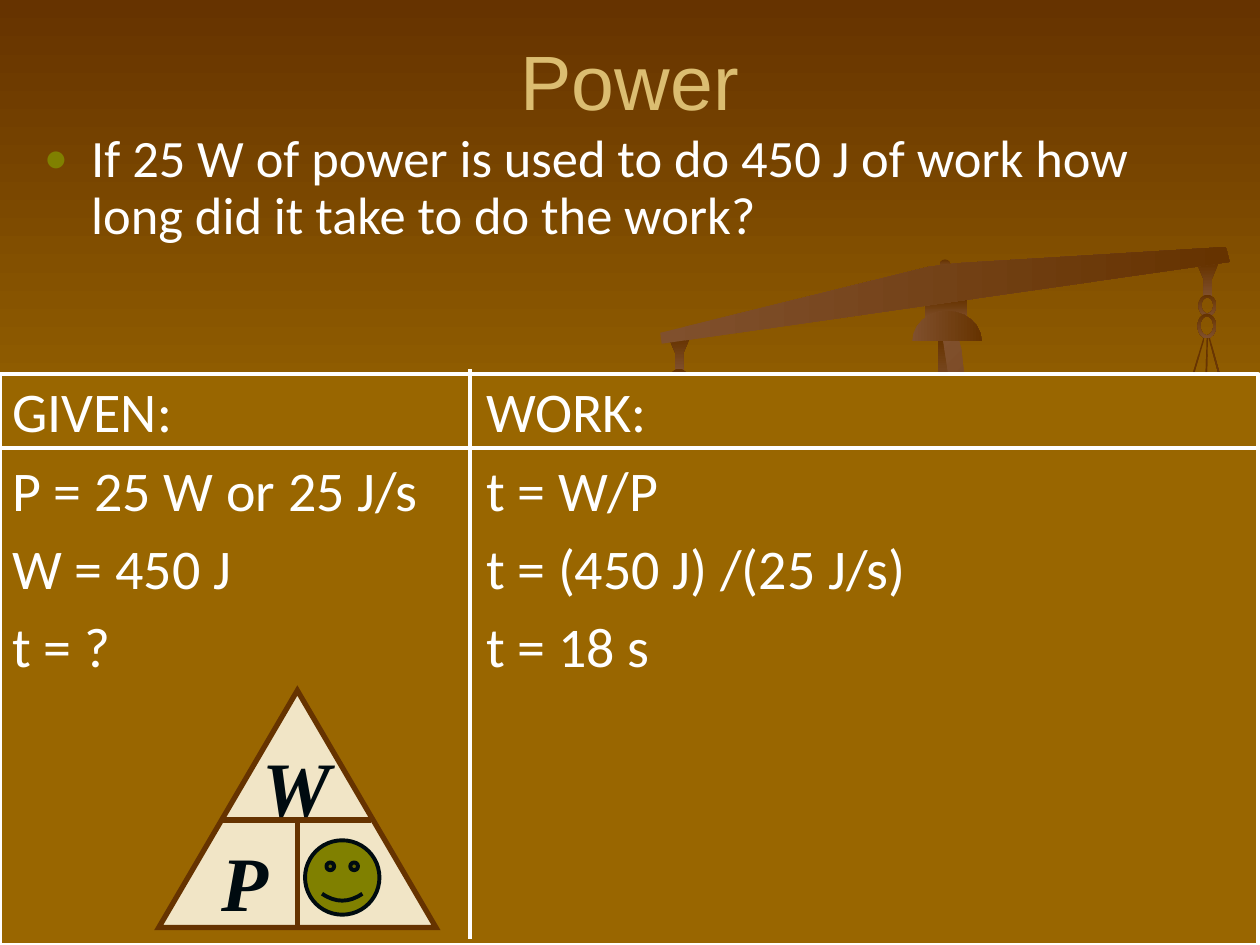
from copy import deepcopy
from dataclasses import dataclass
from math import cos, pi, sin

from lxml import etree
from pptx import Presentation
from pptx import util as u
from pptx.dml.color import RGBColor
from pptx.enum import shapes, text
from pptx.oxml import ns

Cm, Pt = u.Cm, u.Pt
RECTANGLE, OVAL = shapes.MSO_SHAPE.RECTANGLE, shapes.MSO_SHAPE.OVAL


@dataclass(frozen=True)
class Theme:
    brown: str = "663300"
    ochre: str = "996600"
    bronze: str = "80502D"
    gold: str = "DBBD71"
    cream: str = "F1E5C6"
    olive: str = "808000"
    ink: str = "000B10"
    white: str = "FFFFFF"
    title_size: int = 44
    question_size: int = 30
    answer_size: int = 32
    letter_size: int = 44
    panel_line: float = 2.25
    triangle_line: float = 3


theme = Theme()


def paint(shape, fill, line=None, width=0, angle=0):
    """Fill with one colour or a pair of gradient colours; outline if asked."""
    shape.shadow.inherit = False
    if isinstance(fill, tuple):
        shape.fill.gradient()
        shape.fill.gradient_angle = -angle % 360
        for stop, position, colour in zip(shape.fill.gradient_stops, (0, 1), fill):
            stop.position, stop.color.rgb = position, RGBColor.from_string(colour)
    else:
        shape.fill.solid()
        shape.fill.fore_color.rgb = RGBColor.from_string(fill)
    if line:
        shape.line.color.rgb = RGBColor.from_string(line)
        shape.line.width = Pt(width)
    else:
        shape.line.fill.background()


def write(parent, box, lines, colour, font, layout=None, frame=None):
    """Add a text box with one paragraph per line and return its paragraphs."""
    text_frame = parent.add_textbox(*map(Cm, box)).text_frame
    for name, value in {"word_wrap": True, **(frame or {})}.items():
        setattr(text_frame, name, value)
    for number, line in enumerate(lines):
        paragraph = text_frame.add_paragraph() if number else text_frame.paragraphs[0]
        for name, value in (layout or {}).items():
            setattr(paragraph, name, value)
        run = paragraph.add_run()
        run.text = line
        run.font.color.rgb = RGBColor.from_string(colour)
        for name, value in font.items():
            setattr(run.font, name, value)
    return text_frame.paragraphs


slide_width, slide_height = 25.4, 19.05
presentation = Presentation()
presentation.slide_width, presentation.slide_height = Cm(slide_width), Cm(slide_height)
slide = presentation.slides.add_slide(presentation.slide_layouts[6])

# Background: brown, ochre in the middle, brown again
background = slide.background.fill
background.gradient()
background.gradient_angle = 270
stop_list = slide.element.find(".//" + ns.qn("a:gsLst"))
stop_list.append(deepcopy(stop_list[-1]))
for stop, position, colour in zip(background.gradient_stops, (0, 0.5, 1),
                                  (theme.brown, theme.ochre, theme.brown)):
    stop.position, stop.color.rgb = position, RGBColor.from_string(colour)

# Scale: cap, pivot, neck and three cords, each cord fanned out by its rotation
scale = slide.shapes.add_group_shape().shapes
to_bronze = (theme.brown, theme.bronze)
to_brown = (theme.bronze, theme.brown)
cord_width = 0.03
for kind, box, rotation in (
    (RECTANGLE, (18.64, 6.02, 0.86, 0.46), 0),
    (OVAL, (18.95, 5.23, 0.2, 0.2), 0),
    (RECTANGLE, (18.9, 6.81, 0.33, 1.07), 0),
    (RECTANGLE, (22.96, 6.6, cord_width, 9.14), 16.6),
    (RECTANGLE, (24.21, 6.76, cord_width, 8.81), 1.5),
    (RECTANGLE, (24.87, 6.71, cord_width, 3.89), -15.4),
):
    part = scale.add_shape(kind, *map(Cm, box))
    part.rotation = rotation
    paint(part, to_bronze, angle=90)

# Scale: hooks are a wide top narrowing to a stem, the same at both beam ends
hook_top, hook_shoulder, hook_foot = 5.32, 5.62, 5.99
left_drop = 1.49
outlines = []
for centre, drop in ((24.34, 0), (13.69, left_drop)):
    hook = [(centre - 0.21, hook_top), (centre - 0.08, hook_shoulder),
            (centre - 0.08, hook_foot), (centre + 0.09, hook_foot),
            (centre + 0.09, hook_shoulder), (centre + 0.22, hook_top)]
    outlines.append(([[(x, y + drop) for x, y in hook]], to_bronze, 90))

# Scale: chain rings are an oval with a smaller oval cut out
ring_wall, ring_steps = 0.06, 16
ring_angles = [2 * pi * step / ring_steps for step in range(ring_steps)]
for x, y, radius_x, radius_y in (
    (13.69, 7.65, 0.18, 0.22),
    (24.34, 6.16, 0.18, 0.22),
    (24.33, 6.57, 0.19, 0.25),
):
    ring = [[(x + (radius_x - inset) * cos(angle), y + (radius_y - inset) * sin(angle))
             for angle in ring_angles] for inset in (0, ring_wall)]
    outlines.append((ring, to_bronze, 90))

# Scale: beam, strut behind the neck, and a half oval as dome
beam = [(24.71, 4.98), (24.79, 5.28), (13.34, 6.93), (13.31, 6.71), (18.72, 5.38), (19.28, 5.31)]
strut = [(20.09, 13.69), (19.05, 7.11), (19, 6.81), (19.3, 6.73), (19.38, 7.04)]
dome_steps = 12
dome = [(19.09 + 0.7 * cos(pi * step / dome_steps), 6.88 - 0.61 * sin(pi * step / dome_steps))
        for step in range(dome_steps + 1)]
outlines += [([beam], to_brown, 0), ([strut], to_brown, 45), ([dome], to_brown, 0)]

for contours, fill, angle in outlines:
    contours = [[(Cm(x), Cm(y)) for x, y in contour] for contour in contours]
    builder = scale.build_freeform(*contours[0][0])
    for contour in contours:
        builder.move_to(*contour[0])
        builder.add_line_segments(contour[1:], close=True)
    paint(builder.convert_to_shape(), fill, angle=angle)

# Title and question
write(slide.shapes, (1.27, 0.43, 22.86, 2.34), ["Power"], theme.gold,
      {"name": "Arial", "size": Pt(theme.title_size)},
      {"alignment": text.PP_ALIGN.CENTER}, {"vertical_anchor": text.MSO_ANCHOR.MIDDLE})
question = write(
    slide.shapes, (0.64, 2.54, 23.32, 4.37),
    ["If 25 W of power is used to do 450 J of work how long did it take to do the work?"],
    theme.white, {"name": "Calibri", "size": Pt(theme.question_size)}, {"line_spacing": 0.9})[0]
bullet_indent = Cm(0.95)
properties = question._p.get_or_add_pPr()
properties.set("marL", str(bullet_indent))
properties.set("indent", str(-bullet_indent))
bullet_colour = etree.SubElement(properties, ns.qn("a:buClr"))
etree.SubElement(bullet_colour, ns.qn("a:srgbClr"), val=theme.olive)
for tag, name, value in (("a:buSzPct", "val", "75000"), ("a:buFont", "typeface", "Arial"),
                         ("a:buChar", "char", "●")):
    etree.SubElement(properties, ns.qn(tag)).set(name, value)

# Answer panel with its two columns
panel_top, divider_x, header_bottom = 7.54, 9.47, 9.04
panel = slide.shapes.add_shape(
    RECTANGLE, *map(Cm, (0, panel_top, slide_width - 0.03, slide_height - panel_top)))
paint(panel, theme.ochre, theme.white, theme.panel_line)
for left, width, lines in (
    (0, 10.49, ["GIVEN:", "P = 25 W or 25 J/s", "W = 450 J", "t = ?"]),
    (9.55, 15.85, ["WORK:", "t = W/P", "t = (450 J) /(25 J/s)", "t = 18 s"]),
):
    write(slide.shapes, (left, 7.47, width, 7.2), lines, theme.white,
          {"name": "Calibri", "size": Pt(theme.answer_size)},
          {"space_before": Pt(0.2 * theme.answer_size)})

# Formula triangle with sharp corners
left, top, width, height = 3.2, 13.92, 5.59, 4.78
middle_x, middle_y, bottom = left + width / 2, 16.53, top + height
formula = slide.shapes.add_group_shape().shapes
triangle = formula.add_shape(shapes.MSO_SHAPE.ISOSCELES_TRIANGLE,
                             *map(Cm, (left, top, width, height)))
paint(triangle, theme.cream, theme.brown, theme.triangle_line)
etree.SubElement(triangle.element.spPr.find(ns.qn("a:ln")), ns.qn("a:miter"), lim="800000")

# Dividing lines of the panel and of the triangle
panel_style = (slide.shapes, theme.white, theme.panel_line)
triangle_style = (formula, theme.brown, theme.triangle_line)
for (parent, colour, weight), ends in (
    (panel_style, (divider_x, 7.44, divider_x, 18.92)),
    (panel_style, (0, header_bottom, slide_width, header_bottom)),
    (triangle_style, (4.45, middle_y, 7.47, middle_y)),
    (triangle_style, (middle_x, middle_y, middle_x, bottom)),
):
    divider = parent.add_connector(shapes.MSO_CONNECTOR.STRAIGHT, *map(Cm, ends))
    divider.line.color.rgb = RGBColor.from_string(colour)
    divider.line.width = Pt(weight)
    etree.SubElement(divider.element.spPr, ns.qn("a:effectLst"))

# Letters, and the face in the place of the unknown
for letter, box in (("P", (4.22, 16.69, 1.47, 2.13)), ("W", (5.05, 14.78, 1.9, 2.11))):
    write(formula, box, [letter], theme.ink,
          {"name": "Times New Roman", "size": Pt(theme.letter_size), "bold": True, "italic": True},
          frame={"word_wrap": False, "auto_size": text.MSO_AUTO_SIZE.SHAPE_TO_FIT_TEXT})
face = slide.shapes.add_shape(shapes.MSO_SHAPE.SMILEY_FACE, *map(Cm, (6.15, 16.94, 1.5, 1.5)))
paint(face, theme.olive, theme.ink, theme.panel_line)

presentation.save("out.pptx")
